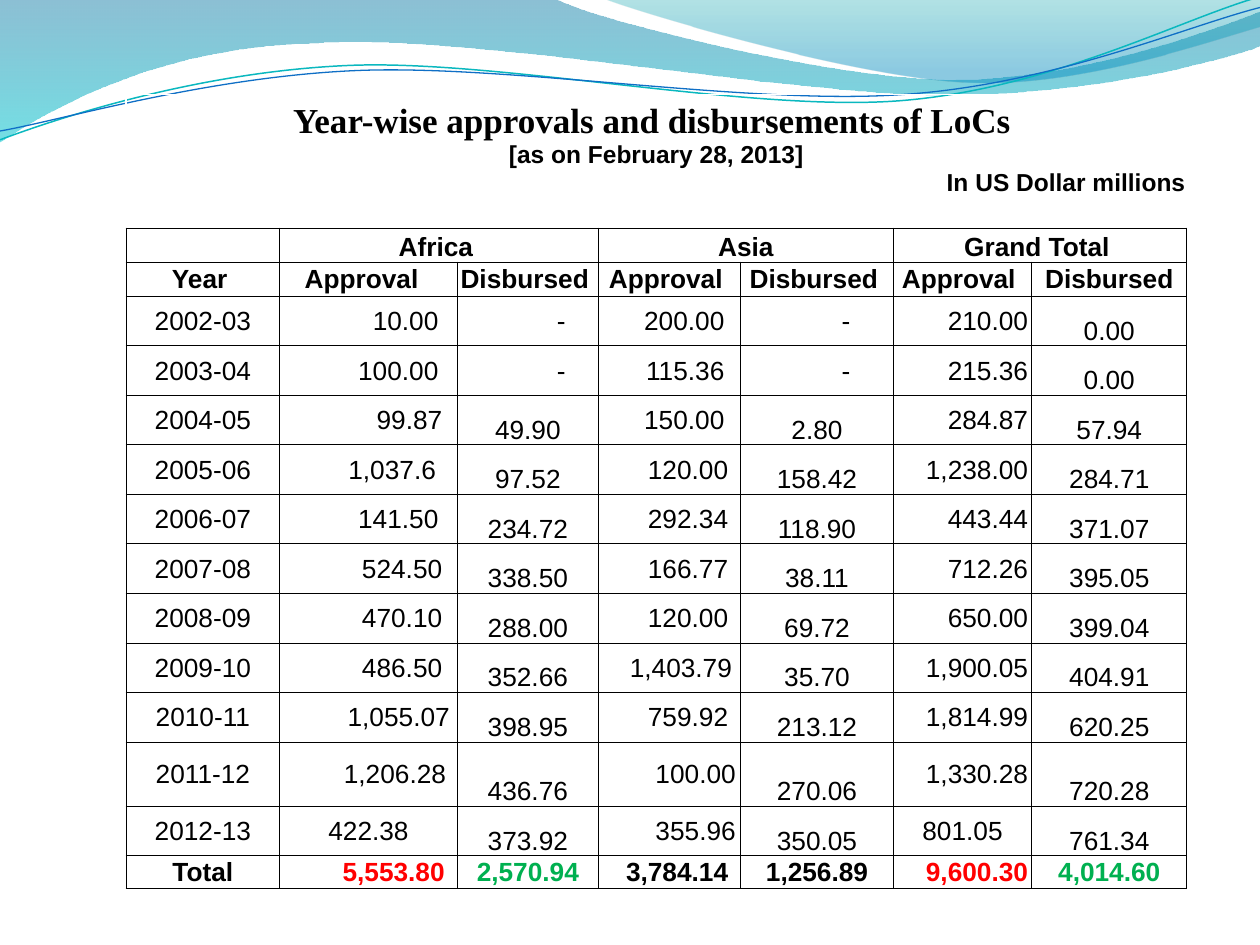
import math

from lxml import etree
from pptx import Presentation
from pptx.dml.color import RGBColor
from pptx.enum.text import MSO_ANCHOR, PP_ALIGN
from pptx.oxml.ns import qn
from pptx.util import Inches, Pt

CENTER, RIGHT = PP_ALIGN.CENTER, PP_ALIGN.RIGHT
MIDDLE, BOTTOM = MSO_ANCHOR.MIDDLE, MSO_ANCHOR.BOTTOM

COLORS = {
    "black": "000000", "red": "FF0000", "green": "00B050",
    "steel": "0074A1", "aqua": "00C6CF", "teal": "00A1A9", "sky": "008BBF",
    "teal line": "0AB8BF", "blue line": "0F6FC6",
}

# Wave outlines: a two-number step is a straight line, a six-number one a curve
BAND_PATH = [
    (0, 0), (4.4, -0.01),
    (4.76, 0.17, 6.64, 0.63, 7.58, 0.63), (8.53, 0.63, 9.58, 0.26, 10, 0.09),
    (10.01, 0.36),
    (9.83, 0.44, 8.7, 0.76, 7.46, 0.75), (6.22, 0.75, 3.82, 0.28, 2.57, 0.34),
    (1.29, 0.36, 0.46, 0.83, -0.01, 1.13),
]
CREST_PATH = [
    (4.79, -0.01), (5.09, 0.11, 6.82, 0.62, 7.69, 0.65),
    (8.56, 0.69, 9.61, 0.32, 10, 0.21), (10, 0),
]
TEAL_PATH = [
    (0, 1.11), (0.48, 0.93, 1.58, 0.57, 2.77, 0.52),
    (3.95, 0.47, 5.93, 0.89, 7.13, 0.8), (8.33, 0.71, 9.38, 0.15, 9.98, -0.02),
]
BLUE_PATH = [
    (0, 1.04), (0.47, 0.96, 1.64, 0.61, 2.83, 0.56),
    (4.03, 0.51, 5.97, 0.84, 7.17, 0.75), (8.36, 0.67, 9.41, 0.21, 10, 0.06),
]
LINE_TILT = -2.7
UNITS = 1000  # outline units to the inch

HEADING = [
    ("Year-wise approvals and disbursements of LoCs ", CENTER, 20, "Times New Roman"),
    ("[as on February 28, 2013]", CENTER, 14, "Arial"),
    ("In US Dollar millions", RIGHT, 14, "Arial"),
]
REGIONS = {1: ("Africa", 0.06), 3: ("Asia", 0.01), 5: ("Grand Total", 0.06)}
COLUMN_HEADS = ["Year"] + ["Approval", "Disbursed"] * 3
HEAD_INSETS = [0.06, 0.12, 0.06, 0.07, 0.06, 0.07, 0.01]
YEARLY = [
    ["2002-03", "10.00", "-", "200.00", "-", "210.00", "0.00"],
    ["2003-04", "100.00", "-", "115.36", "-", "215.36", "0.00"],
    ["2004-05", "99.87", "49.90", "150.00", "2.80", "284.87", "57.94"],
    ["2005-06", "1,037.6", "97.52", "120.00", "158.42", "1,238.00", "284.71"],
    ["2006-07", "141.50", "234.72", "292.34", "118.90", "443.44", "371.07"],
    ["2007-08", "524.50", "338.50", "166.77", "38.11", "712.26", "395.05"],
    ["2008-09", "470.10", "288.00", "120.00", "69.72", "650.00", "399.04"],
    ["2009-10", "486.50", "352.66", "1,403.79", "35.70", "1,900.05", "404.91"],
    ["2010-11", "1,055.07", "398.95", "759.92", "213.12", "1,814.99", "620.25"],
    ["2011-12", "1,206.28", "436.76", "100.00", "270.06", "1,330.28", "720.28"],
    ["2012-13", "422.38", "373.92", "355.96", "350.05", "801.05", "761.34"],
]
TOTALS = ["Total", "5,553.80", "2,570.94", "3,784.14", "1,256.89", "9,600.30", "4,014.60"]
TOTAL_COLORS = ["black", "red", "green", "black", "black", "red", "green"]

COLUMN_WIDTHS = [1.22, 1.41, 1.12, 1.13, 1.21, 1.1, 1.23]
YEAR_HEIGHT = 3.54 / 9
ROW_HEIGHTS = [0.81, 0.25, 0.27, 0.27] + [YEAR_HEIGHT] * 9 + [0.51, YEAR_HEIGHT, 0.26]
# Right insets of the approval figures, from the first year to the total
APPROVAL_INSETS = {
    1: [0.15, 0.15, 0.12, 0.17, 0.15, 0.12, 0.12, 0.12, 0.06, 0.09, None, 0.1],
    3: [0.13, 0.13, 0.13, 0.1, 0.1, 0.1, 0.1, 0.07, 0.1, 0.04, 0.04, 0.1],
    5: [0.03] * 10 + [None, 0.03],
}
DASH_INSETS = {2: 0.26, 4: 0.34}


def rgb(name):
    return RGBColor.from_string(COLORS[name])


def turn(point, center, degrees):
    (x, y), (cx, cy) = point, center
    cos, sin = math.cos(math.radians(degrees)), math.sin(math.radians(degrees))
    return cx + (x - cx) * cos - (y - cy) * sin, cy + (x - cx) * sin + (y - cy) * cos


def add_outline(slide, path, close, center=(0, 0), tilt=0):
    points = [turn(step[i:i + 2], center, -tilt) for step in path for i in range(0, len(step), 2)]
    points = [(round(x * UNITS), round(y * UNITS)) for x, y in points]
    builder = slide.shapes.build_freeform(*points[0], scale=Inches(1) / UNITS)
    builder.add_line_segments(points[1:], close=close)
    shape = builder.convert_to_shape()
    shape.shadow.inherit = False
    shape.rotation = tilt

    # Join the three points of each curve into one cubic segment
    segments = iter(list(shape.element.iter(qn("a:lnTo"))))
    for step in path[1:]:
        first = next(segments)
        if len(step) == 6:
            curve = etree.Element(qn("a:cubicBezTo"))
            first.addprevious(curve)
            for segment in (first, next(segments), next(segments)):
                curve.append(segment[0])
                segment.getparent().remove(segment)
    return shape


def add_wave(slide, path, stops):
    wave = add_outline(slide, path, True)
    wave.line.fill.background()
    wave.fill.gradient()
    wave.fill.gradient_angle = 270
    for stop, (position, color, _) in zip(wave.fill.gradient_stops, stops):
        stop.position, stop.color.rgb = position, rgb(color)
    for color, (_, _, opacity) in zip(wave.element.iter(qn("a:srgbClr")), stops):
        etree.SubElement(color, qn("a:alpha"), val=str(opacity * 1000))


def add_wave_line(slide, path, center, color, width):
    line = add_outline(slide, path, False, center, LINE_TILT)
    line.fill.background()
    line.line.color.rgb = rgb(color)
    line.line.width = Pt(width)


def write(paragraph, text, align=CENTER, size=15, face="Arial", bold=False, color="black"):
    paragraph.alignment = align
    run = paragraph.add_run()
    run.text = text
    run.font.color.rgb = rgb(color)
    for attribute, value in {"size": Pt(size), "name": face, "bold": bold}.items():
        setattr(run.font, attribute, value)


def fill_cell(cell, text, anchor=MIDDLE, inset=0.01, **style):
    cell.vertical_anchor = anchor
    cell.margin_right = Inches(inset)
    write(cell.text_frame.paragraphs[0], text, **style)


def set_borders(cell, sides):
    properties = cell._tc.get_or_add_tcPr()
    for index, side in enumerate(sides):
        border = etree.Element(qn("a:ln" + side), w=str(Pt(0.5)))
        solid = etree.SubElement(border, qn("a:solidFill"))
        etree.SubElement(solid, qn("a:srgbClr"), val=COLORS["black"])
        properties.insert(index, border)


def figure_inset(r, c, figure):
    """Right inset of a right-aligned figure; None for a centred one."""
    if figure == "-":
        return DASH_INSETS[c]
    return APPROVAL_INSETS[c][r] if c in APPROVAL_INSETS else None


def add_loan_table(slide, left, top, width, height):
    frame = slide.shapes.add_table(len(ROW_HEIGHTS), len(COLUMN_WIDTHS), left, top, width, height)
    table = frame.table
    table.first_row = table.horz_banding = False
    for column, size in zip(table.columns, COLUMN_WIDTHS):
        column.width = Inches(size)
    for row, size in zip(table.rows, ROW_HEIGHTS):
        row.height = Inches(size)
    margins = {"margin_left": 0.01, "margin_right": 0.01, "margin_top": 0.01, "margin_bottom": 0}
    for r, row in enumerate(table.rows):
        for cell in row.cells:
            for attribute, value in margins.items():
                setattr(cell, attribute, Inches(value))
            cell.fill.background()
            set_borders(cell, ["", "B", "LRTB"][min(r, 2)])

    # Heading and region rows
    table.cell(0, 0).merge(table.cell(0, 6))
    table.cell(1, 3).merge(table.cell(1, 4))
    heading = table.cell(0, 0)
    heading.vertical_anchor = BOTTOM
    for i, (text, align, size, face) in enumerate(HEADING):
        body = heading.text_frame
        paragraph = body.add_paragraph() if i else body.paragraphs[0]
        write(paragraph, text, align, size, face, bold=True)
    for c, (region, inset) in REGIONS.items():
        table.cell(2, c).merge(table.cell(2, c + 1))
        fill_cell(table.cell(2, c), region, BOTTOM, inset, bold=True)
    for c, (head, inset) in enumerate(zip(COLUMN_HEADS, HEAD_INSETS)):
        fill_cell(table.cell(3, c), head, inset=inset, bold=True)

    # Yearly figures and totals
    for r, figures in enumerate(YEARLY + [TOTALS]):
        is_total = r == len(YEARLY)
        for c, figure in enumerate(figures):
            inset = figure_inset(r, c, figure)
            low = c in (2, 4, 6) and figure != "-" and not is_total
            fill_cell(table.cell(r + 4, c), figure, BOTTOM if low else MIDDLE, inset or 0.01,
                      align=RIGHT if inset else CENTER, bold=is_total,
                      color=TOTAL_COLORS[c] if is_total else "black")

    # Small type in empty cells keeps their rows low
    for cell in table.iter_cells():
        if not cell.text_frame.text:
            etree.SubElement(cell.text_frame.paragraphs[0]._p, qn("a:endParaRPr"), sz="800")


def main():
    deck = Presentation()
    deck.slide_width, deck.slide_height = Inches(10), Inches(7.5)
    slide = deck.slides.add_slide(deck.slide_layouts[6])
    add_wave(slide, BAND_PATH, [(0, "steel", 45), (1, "aqua", 55)])
    add_wave(slide, CREST_PATH, [(0, "teal", 30), (0.8, "sky", 45)])
    add_wave_line(slide, TEAL_PATH, (4.99, 0.58), "teal line", 0.85)
    add_wave_line(slide, BLUE_PATH, (5, 0.59), "blue line", 0.75)
    add_loan_table(slide, Inches(1), Inches(0.75), Inches(8.42), Inches(6.3))
    deck.save("out.pptx")


if __name__ == "__main__":
    main()
